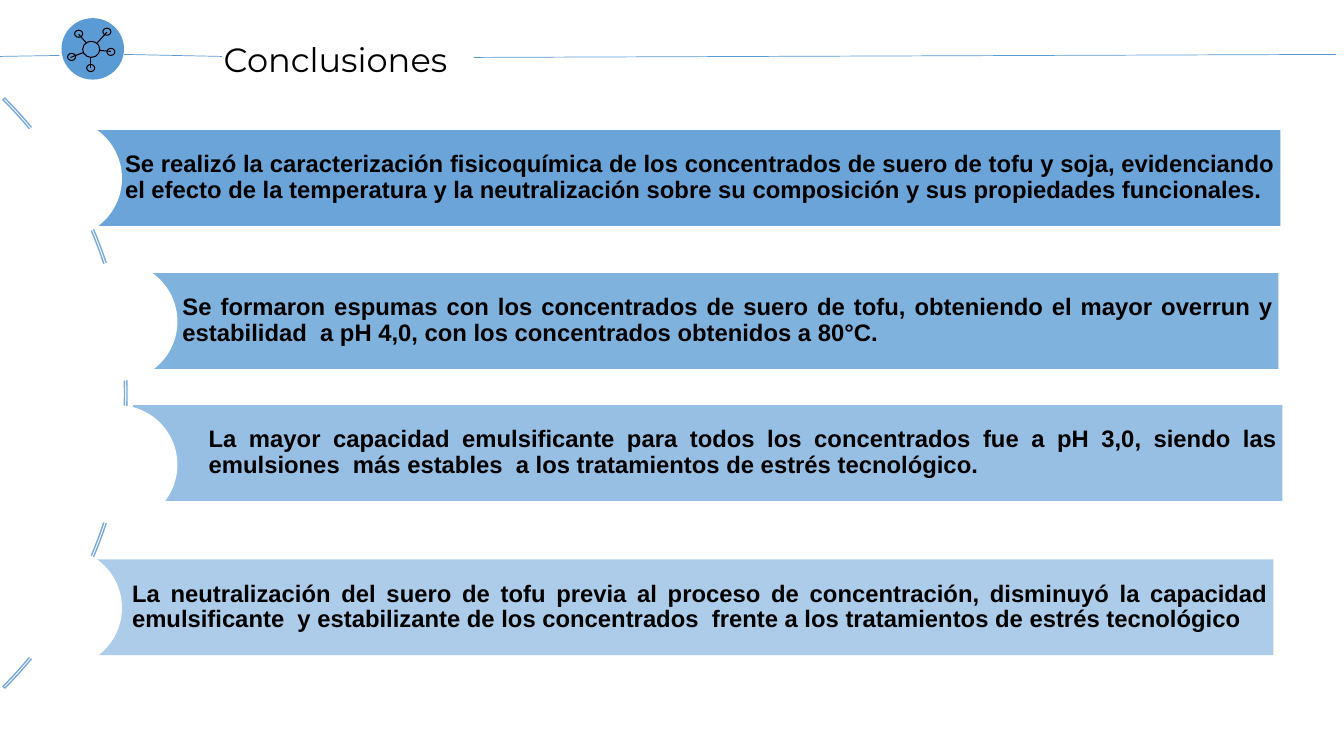
from dataclasses import dataclass

from lxml.etree import SubElement
from pptx import Presentation
from pptx.dml.color import RGBColor
from pptx.enum.shapes import MSO_CONNECTOR, MSO_SHAPE
from pptx.enum.text import MSO_ANCHOR, MSO_AUTO_SIZE, PP_ALIGN
from pptx.oxml.ns import qn
from pptx.util import Inches, Pt


@dataclass(frozen=True)
class Theme:
    blue: RGBColor = RGBColor(0x5B, 0x9B, 0xD5)
    arc_blue: RGBColor = RGBColor(0x7A, 0xA9, 0xDA)
    black: RGBColor = RGBColor(0, 0, 0)
    white: RGBColor = RGBColor(0xFF, 0xFF, 0xFF)
    title_font: str = "Montserrat"
    body_font: str = "Arial"
    title_size: Pt = Pt(24)
    body_size: Pt = Pt(17)
    rule_width: Pt = Pt(0.5)
    icon_width: Pt = Pt(0.75)
    arc_width: Pt = Pt(1)


THEME = Theme()

BAR_HEIGHT = 0.95
DISC_SIZE = 1.18

CONCLUSIONS = [
    ((0.49, 1.29, 12.21), (0.03, 1.18), 90,
     "Se realizó la caracterización fisicoquímica de los concentrados de suero de tofu y soja, "
     "evidenciando el efecto de la temperatura y la neutralización sobre su composición y sus "
     "propiedades funcionales."),
    ((1.06, 2.71, 11.62), (0.58, 2.6), 77,
     "Se formaron espumas con los concentrados de suero de tofu, obteniendo el mayor overrun y "
     "estabilidad  a pH 4,0, con los concentrados obtenidos a 80°C."),
    ((1.32, 4.02, 11.4), (0.58, 4.02), 63,
     "La mayor capacidad emulsificante para todos los concentrados fue a pH 3,0, siendo las "
     "emulsiones  más estables  a los tratamientos de estrés tecnológico."),
    ((0.56, 5.55, 12.07), (0.03, 5.44), 50,
     "La neutralización del suero de tofu previa al proceso de concentración, disminuyó la "
     "capacidad emulsificante  y estabilizante de los concentrados  frente a los tratamientos "
     "de estrés tecnológico"),
]

HEADER_RULES = [
    ((0, 0.56), (0.59, 0.55)),
    ((1.23, 0.54), (2.2, 0.56)),
    ((4.7, 0.57), (13.25, 0.54)),
]

ICON_NODES = [(1.02, 0.28), (0.74, 0.3), (0.67, 0.53), (0.86, 0.64), (1.06, 0.48)]
ICON_SPOKES = [
    ((0.78, 0.34), (0.86, 0.43)),
    ((0.96, 0.43), (1.06, 0.32)),
    ((1.1, 0.51), (0.99, 0.5)),
    ((0.9, 0.67), (0.9, 0.57)),
    ((0.7, 0.57), (0.83, 0.52)),
]


def add_figure(slide, preset, box, fill=None, line=None, width=None):
    figure = slide.shapes.add_shape(preset, *(Inches(length) for length in box))
    figure.shadow.inherit = False
    if fill is None:
        figure.fill.background()
    else:
        figure.fill.solid()
        figure.fill.fore_color.rgb = fill
    if line is None:
        figure.line.fill.background()
    else:
        figure.line.color.rgb = line
        figure.line.width = width
    return figure


def add_line(slide, start, end, color, width):
    rule = slide.shapes.add_connector(
        MSO_CONNECTOR.STRAIGHT, *(Inches(length) for length in start + end))
    rule.line.color.rgb = color
    rule.line.width = width
    SubElement(rule._element.spPr, qn("a:effectLst"))


def set_opacity(figure, percent):
    color = figure._element.spPr.find(qn("a:solidFill"))[0]
    SubElement(color, qn("a:alpha")).set("val", str(percent * 1000))


def style_font(font, name, size, bold=False):
    font.name = name
    font.size = size
    font.bold = bold
    font.color.rgb = THEME.black


def add_title(slide, wording):
    title = slide.shapes.add_textbox(Inches(2.12), Inches(0.34), Inches(6.54), Inches(0.5))
    frame = title.text_frame
    frame.word_wrap = True
    frame.auto_size = MSO_AUTO_SIZE.SHAPE_TO_FIT_TEXT
    frame.text = wording
    style_font(frame.paragraphs[0].runs[0].font, THEME.title_font, THEME.title_size)


def add_network_icon(slide):
    add_figure(slide, MSO_SHAPE.OVAL, (0.61, 0.18, 0.62, 0.61), THEME.blue)
    hub = (0.82, 0.41, 0.17, 0.16)
    nodes = [(left, top, 0.08, 0.07) for left, top in ICON_NODES]
    for ring in nodes + [hub]:
        add_figure(slide, MSO_SHAPE.OVAL, ring, line=THEME.black, width=THEME.icon_width)
    for start, end in ICON_SPOKES:
        add_line(slide, start, end, THEME.black, THEME.icon_width)


def add_arc(slide):
    arc = add_figure(slide, MSO_SHAPE.BLOCK_ARC, (-7.02, -0.24, 8.28, 8.28),
                     line=THEME.arc_blue, width=THEME.arc_width)
    for index, value in enumerate((189, 27, 0.003)):
        arc.adjustments[index] = value


def add_conclusion(slide, bar_box, disc_corner, opacity, wording):
    bar = add_figure(slide, MSO_SHAPE.RECTANGLE, (*bar_box, BAR_HEIGHT), THEME.blue)
    set_opacity(bar, opacity)
    frame = bar.text_frame
    frame.word_wrap = True
    frame.vertical_anchor = MSO_ANCHOR.MIDDLE
    frame.margin_left = Inches(0.75)
    frame.margin_right = frame.margin_top = frame.margin_bottom = Inches(0.05)
    frame.text = wording
    paragraph = frame.paragraphs[0]
    paragraph.alignment = PP_ALIGN.JUSTIFY
    paragraph.line_spacing = 0.9
    style_font(paragraph.runs[0].font, THEME.body_font, THEME.body_size, bold=True)
    add_figure(slide, MSO_SHAPE.OVAL, (*disc_corner, DISC_SIZE, DISC_SIZE), THEME.white)


def main():
    presentation = Presentation()
    presentation.slide_width = Inches(13.33)
    presentation.slide_height = Inches(7.5)
    slide = presentation.slides.add_slide(presentation.slide_layouts[6])

    add_network_icon(slide)
    add_title(slide, "Conclusiones")
    for start, end in HEADER_RULES:
        add_line(slide, start, end, THEME.blue, THEME.rule_width)
    add_arc(slide)
    for conclusion in CONCLUSIONS:
        add_conclusion(slide, *conclusion)

    presentation.save("out.pptx")


if __name__ == "__main__":
    main()
